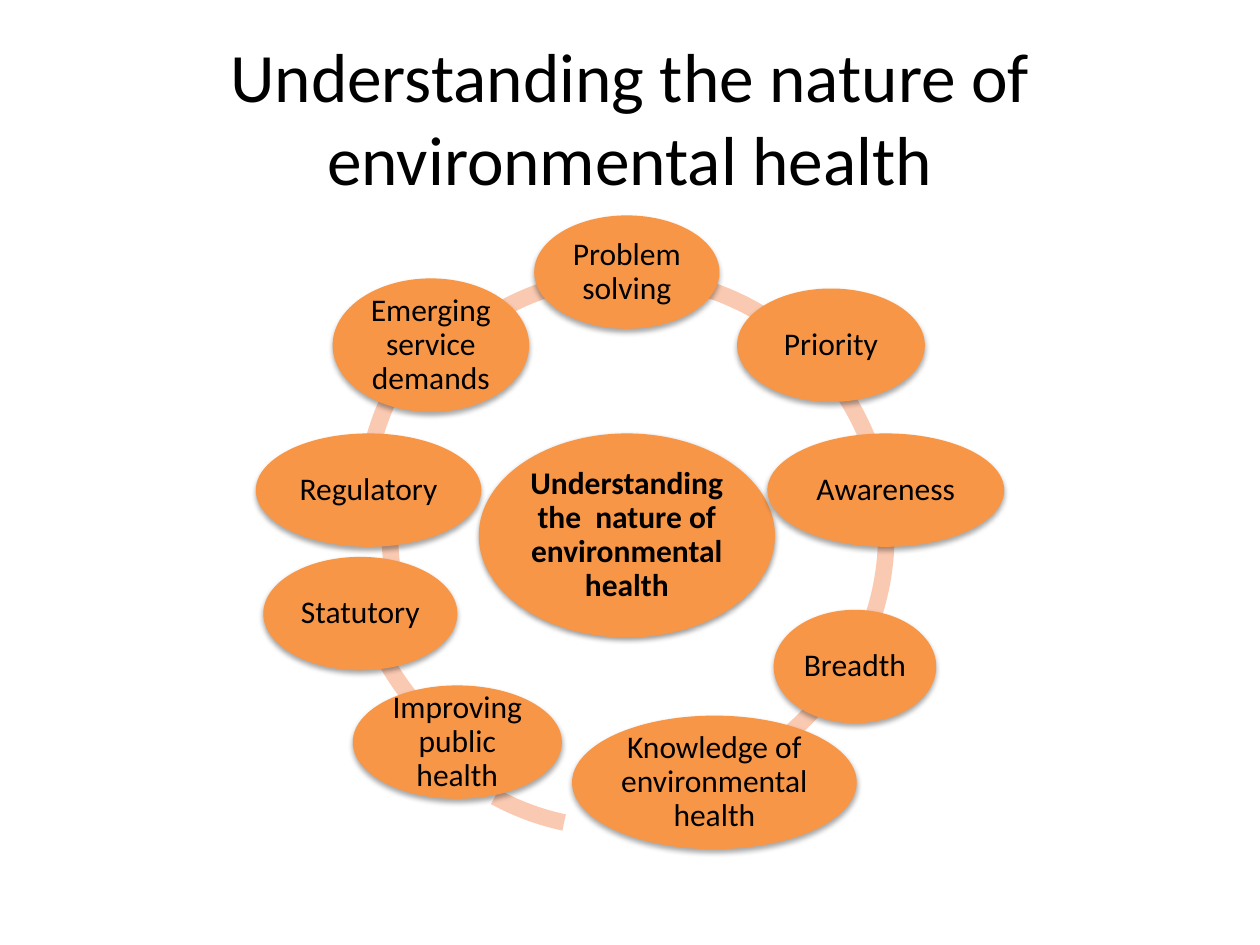
"""Build a slide with nine topics on a ring around environmental health."""
from lxml.etree import SubElement
from pptx import Presentation
from pptx.dml.color import RGBColor
from pptx.enum.shapes import MSO_SHAPE as Shape
from pptx.enum.text import MSO_ANCHOR as Anchor, PP_ALIGN as Align
from pptx.oxml.ns import qn
from pptx.util import Inches, Pt

WIDTH, HEIGHT = Inches(10), Inches(7.5)
COLUMNS, ROWS = 100, 75
ORANGE, PEACH, BLACK = "F79646", "FAC9B1", "000000"
RING_SIZE, RING_BAND = 42.4, 0.031
TOPIC_HEIGHT, TALL_TOPIC = 9, 10.6

RING_ARCS = [
    (27.4, 21.3, 135.65, 163.92),
    (28.8, 19.8, 111.52, 132.35),
    (27.9, 24.0, 102.15, 118.55),
    (27.1, 20.7, 75.16, 96.6),
    (28.1, 21.4, 41.41, 77.09),
    (28.7, 21.2, 18.19, 42.48),
    (28.6, 21.3, 210, 18),
    (28.3, 19.1, 193.23, 213.7),
    (30.3, 21.2, 159.24, 188.44),
]
TOPICS = [
    ("Problem solving", 42.4, 17.1, 14.7, TOPIC_HEIGHT),
    ("Priority", 58.5, 22.9, 14.9, TOPIC_HEIGHT),
    ("Awareness", 60.9, 34.4, 18.8, TOPIC_HEIGHT),
    ("Breadth", 61.4, 48.4, 12.9, TOPIC_HEIGHT),
    ("Knowledge of environmental health", 45.4, 56.8, 22.6, TALL_TOPIC),
    ("Improving public health", 28, 54.4, 16.6, TOPIC_HEIGHT),
    ("Statutory", 20.9, 44.2, 15.4, TOPIC_HEIGHT),
    ("Regulatory", 20.3, 34.4, 17.9, TOPIC_HEIGHT),
    ("Emerging service demands", 26.4, 22.1, 15.6, TALL_TOPIC),
]


def grid(column, row, columns, rows):
    """Turn a grid cell range into left, top, width and height."""
    across, down = WIDTH / COLUMNS, HEIGHT / ROWS
    return (round(column * across), round(row * down),
            round(columns * across), round(rows * down))


def colour(hex_value):
    """Turn a hex string into a colour."""
    return RGBColor.from_string(hex_value)


def write(holder, text, size=18, bold=False, spacing=1.0, inset=None):
    """Write centred text into a shape or text box."""
    frame = holder.text_frame
    frame.word_wrap = True
    frame.vertical_anchor = Anchor.MIDDLE
    if inset is not None:
        frame.margin_left = frame.margin_right = Inches(inset)
        frame.margin_top = frame.margin_bottom = Inches(inset)
    paragraph = frame.paragraphs[0]
    paragraph.alignment = Align.CENTER
    paragraph.line_spacing = spacing
    run = paragraph.add_run()
    run.text = text
    run.font.name = "Calibri"
    run.font.size = Pt(size)
    run.font.bold = bold
    run.font.color.rgb = colour(BLACK)


def add_filled(slide, kind, area, fill):
    """Add a filled preset shape without outline or shadow."""
    shape = slide.shapes.add_shape(kind, *grid(*area))
    shape.shadow.inherit = False
    shape.fill.solid()
    shape.fill.fore_color.rgb = colour(fill)
    shape.line.fill.background()
    return shape


def drop_shadow(shape, distance, opacity):
    """Cast a soft shadow straight down."""
    effects = shape.element.spPr.find(qn("a:effectLst"))
    shadow = SubElement(effects, qn("a:outerShdw"), blurRad=str(Pt(3.1)),
                        dist=str(Pt(distance)), dir="5400000", rotWithShape="0")
    tint = SubElement(shadow, qn("a:srgbClr"), val=BLACK)
    SubElement(tint, qn("a:alpha"), val=str(opacity * 1000))


def add_arc(slide, column, row, start, end):
    """Add one ring segment between two angles in degrees."""
    arc = add_filled(slide, Shape.BLOCK_ARC,
                     (column, row, RING_SIZE, RING_SIZE), PEACH)
    for index, value in enumerate((start * 0.6, end * 0.6, RING_BAND)):
        arc.adjustments[index] = value


def add_bubble(slide, text, *area, bold=False, distance=1.8, opacity=35):
    """Add a shadowed oval with its label."""
    bubble = add_filled(slide, Shape.OVAL, area, ORANGE)
    drop_shadow(bubble, distance, opacity)
    write(bubble, text, bold=bold, spacing=0.9, inset=0.03)


def main():
    """Build and save the slide."""
    deck = Presentation()
    deck.slide_width, deck.slide_height = WIDTH, HEIGHT
    slide = deck.slides.add_slide(deck.slide_layouts[6])

    title = slide.shapes.add_textbox(*grid(5, 3, 90, 12.5))
    write(title, "Understanding the nature of environmental health", size=39.6)
    for arc in RING_ARCS:
        add_arc(slide, *arc)
    add_bubble(slide, "Understanding the  nature of environmental health",
               38, 34.4, 23.5, 16.2, bold=True, distance=1.6, opacity=38)
    for topic in TOPICS:
        add_bubble(slide, *topic)

    deck.save("out.pptx")


if __name__ == "__main__":
    main()
